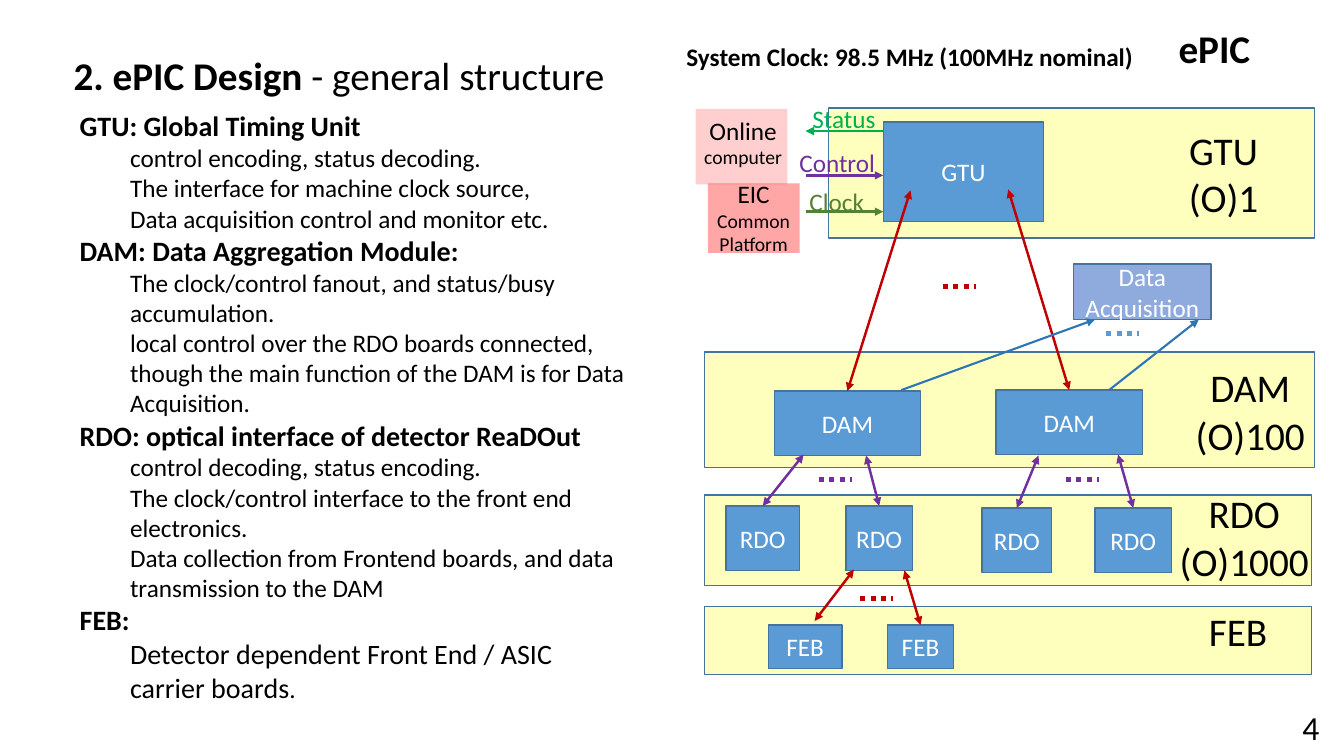
from dataclasses import dataclass

from lxml.etree import SubElement
from pptx import Presentation
from pptx.dml.color import RGBColor
from pptx.enum.dml import MSO_LINE
from pptx.enum.shapes import MSO_CONNECTOR, MSO_SHAPE
from pptx.enum.text import MSO_ANCHOR, MSO_AUTO_SIZE, PP_ALIGN
from pptx.oxml.ns import qn
from pptx.util import Inches, Pt


@dataclass(frozen=True)
class Theme:
    font: str = "Calibri"
    black: str = "000000"
    white: str = "FFFFFF"
    yellow: str = "FFFF00"
    red: str = "FF0000"
    box: str = "5B9BD5"
    acquisition: str = "8FAADC"
    outline: str = "43739E"
    clock: str = "548235"
    purple: str = "7030A0"
    status: str = "00B050"
    dark_red: str = "C00000"
    data: str = "2E75B6"
    large: int = 28
    number: int = 24
    heading: int = 20
    normal: int = 18
    small: int = 14


theme = Theme()


def write(frame, lines, size=theme.normal, color=theme.black, bold=False, align=PP_ALIGN.LEFT,
          anchor=MSO_ANCHOR.TOP, wrap=False, auto_size=MSO_AUTO_SIZE.SHAPE_TO_FIT_TEXT):
    """Fill a text frame; each line is a list of (text, format overrides) runs."""
    frame.word_wrap = wrap
    frame.auto_size = auto_size
    frame.vertical_anchor = anchor
    for index, line in enumerate(lines):
        paragraph = frame.paragraphs[0] if index == 0 else frame.add_paragraph()
        paragraph.alignment = align
        for text, changes in line:
            run = paragraph.add_run()
            run.text = text
            run.font.name = theme.font
            run.font.size = Pt(changes.get("size", size))
            run.font.bold = changes.get("bold", bold)
            run.font.color.rgb = RGBColor.from_string(color)


def draw_line(start, end, color, width, arrows=(), dash=None, target=None):
    """Draw a line with arrows at "headEnd" or "tailEnd"; target is joined at its top."""
    x1, y1, x2, y2 = (Inches(value) for value in (*start, *end))
    connector = slide.shapes.add_connector(MSO_CONNECTOR.STRAIGHT, x1, y1, x2, y2)
    connector.line.color.rgb = RGBColor.from_string(color)
    connector.line.width = Pt(width)
    if dash:
        connector.line.dash_style = dash
    for arrow in arrows:
        SubElement(connector.line._get_or_add_ln(), qn(f"a:{arrow}"), type="triangle")
    SubElement(connector._element.spPr, qn("a:effectLst"))
    if target:
        connector.end_connect(target, 0)


presentation = Presentation()
presentation.slide_width = Inches(13.33)
presentation.slide_height = Inches(7.5)
slide = presentation.slides.add_slide(presentation.slide_layouts[1])

# Title and description
title, body = slide.shapes.title, slide.placeholders[1]
for placeholder, place in ((title, (0.63, 0.46, 5.52, 0.57)), (body, (0.69, 1.03, 5.63, 6.06))):
    placeholder.left, placeholder.top, placeholder.width, placeholder.height = map(Inches, place)
write(title.text_frame, [[("2. ePIC Design ", {"bold": True}), ("- general structure", {})]],
      size=theme.large)

units = {
    "GTU: Global Timing Unit": [
        "control encoding, status decoding.",
        "The interface for machine clock source,",
        "Data acquisition control and monitor etc."],
    "DAM: Data Aggregation Module:": [
        "The clock/control fanout, and status/busy accumulation.",
        "local control over the RDO boards connected, though the main function of the DAM "
        "is for Data Acquisition."],
    "RDO: optical interface of detector ReaDOut": [
        "control decoding, status encoding.",
        "The clock/control interface to the front end electronics.",
        "Data collection from Frontend boards, and data transmission to the DAM"],
    "FEB:": [],
}
lines, levels = [], []
for heading, details in units.items():
    lines.append([(heading, {"size": theme.heading, "bold": True})])
    lines.extend([(detail, {})] for detail in details)
    levels.extend([0] + [1] * len(details))
lines.append([("Detector dependent Front End / ASIC carrier boards", {"size": theme.heading}),
              (".", {})])
levels.append(1)
write(body.text_frame, lines, wrap=True, auto_size=MSO_AUTO_SIZE.NONE)
for paragraph, level in zip(body.text_frame.paragraphs, levels):
    paragraph.level = level
    properties = paragraph._p.get_or_add_pPr()
    properties.set("marL", str(Inches(0.5 * level)))
    properties.set("indent", "0")
    SubElement(properties, qn("a:buNone"))
    paragraph.space_before = Pt(0)

# Bands, outside systems and boxes: place, fill, opacity in percent, outline, label
bands = [(8.22, 1.07, 4.82, 1.29), (6.99, 3.49, 6.05, 1.15),
         (6.99, 4.91, 6.02, 0.9), (6.99, 6.02, 6.02, 0.67)]
rectangles = [(place, theme.yellow, 26, True, "") for place in bands]
rectangles += [((7.02, 1.82, 0.91, 0.69), theme.red, 35, False, ""),
               ((6.9, 1.08, 0.91, 0.75), theme.red, 19, False, "")]
boxes = [
    ("GTU", 8.76, 1.21, 1.59, 0.99),
    ("DAM", 7.68, 3.88, 1.45, 0.64), ("DAM", 9.88, 3.87, 1.45, 0.64),
    ("RDO", 7.2, 5.02, 0.73, 0.64), ("RDO", 8.39, 5.02, 0.66, 0.64),
    ("RDO", 9.74, 5.04, 0.69, 0.64), ("RDO", 10.86, 5.04, 0.76, 0.64),
    ("FEB", 7.62, 6.2, 0.73, 0.43), ("FEB", 8.8, 6.2, 0.66, 0.43),
]
rectangles += [(place, theme.box, 100, True, label) for label, *place in boxes]
rectangles.append(((10.65, 2.62, 1.36, 0.55), theme.acquisition, 100, True, "Data Acquisition"))

labelled = []
for place, fill, opacity, outlined, label in rectangles:
    shape = slide.shapes.add_shape(MSO_SHAPE.RECTANGLE, *map(Inches, place))
    shape.shadow.inherit = False
    shape.fill.solid()
    shape.fill.fore_color.rgb = RGBColor.from_string(fill)
    if opacity < 100:
        color_element = shape._element.spPr.find(qn("a:solidFill"))[0]
        SubElement(color_element, qn("a:alpha"), val=str(opacity * 1000))
    if outlined:
        shape.line.color.rgb = RGBColor.from_string(theme.outline)
        shape.line.width = Pt(1)
    else:
        shape.line.fill.background()
    if label:
        shape.text_frame.margin_left = shape.text_frame.margin_right = Inches(0.05)
        write(shape.text_frame, [[(label, {})]], color=theme.white, align=PP_ALIGN.CENTER,
              anchor=MSO_ANCHOR.MIDDLE, wrap=True, auto_size=MSO_AUTO_SIZE.NONE)
        labelled.append(shape)
gtu, dam_1, dam_2, rdo_1, rdo_2, rdo_3, rdo_4, feb_1, feb_2, acquisition = labelled

# Signals between the outside systems and the GTU
for y, color, arrow in ((1.3, theme.status, "headEnd"), (1.74, theme.purple, "tailEnd"),
                        (2.1, theme.clock, "tailEnd")):
    draw_line((7.99, y), (8.76, y), color, 2, [arrow])

# Two-way links down the hierarchy
links = [
    ((9.03, 1.89), (8.4, 3.88), theme.dark_red, dam_1),
    ((10, 1.88), (10.61, 3.87), theme.dark_red, dam_2),
    ((7.97, 4.51), (7.57, 5.02), theme.purple, rdo_1),
    ((8.59, 4.52), (8.72, 5.02), theme.purple, rdo_2),
    ((10.3, 4.52), (10.08, 5.04), theme.purple, rdo_3),
    ((11.09, 4.51), (11.24, 5.04), theme.purple, rdo_4),
    ((8.47, 5.65), (8.08, 6.16), theme.dark_red, None),
    ((8.97, 5.66), (9.13, 6.2), theme.dark_red, feb_2),
]
for start, end, color, target in links:
    draw_line(start, end, color, 1.75, ["headEnd", "tailEnd"], target=target)
for start, end in (((11.89, 3.17), (11, 3.87)), ((10.86, 3.17), (8.94, 3.87))):
    draw_line(start, end, theme.data, 1.5, ["headEnd"])

# Dots standing for further units
for x, y, color in ((10.97, 3.31, theme.box), (9.35, 2.84, theme.dark_red),
                    (8.12, 4.76, theme.purple), (10.57, 4.76, theme.purple),
                    (8.53, 5.94, theme.dark_red)):
    draw_line((x, y), (x + 0.33, y), color, 3.75, dash=MSO_LINE.ROUND_DOT)

# Free labels: place, lines, format
large = {"size": theme.large}
centered = {"align": PP_ALIGN.CENTER}
small = {"size": theme.small}
labels = [
    ((7.96, 0.98, 0.83, 0.4), [[("Status", {})]], {"color": theme.status}),
    ((7.83, 1.41, 0.96, 0.4), [[("Control", {})]], {"color": theme.purple}),
    ((7.93, 1.8, 0.75, 0.4), [[("Clock", {})]], {"color": theme.clock}),
    ((6.88, 1.09, 0.98, 0.64), [[("Online ", {}), ("computer", small)]],
     {**centered, "wrap": True}),
    ((7.01, 1.72, 0.93, 0.88), [[("EIC", {})], [("Common", small)], [("Platform", small)]],
     centered),
    ((11.59, 1.2, 1.09, 1.04), [[("GTU (O)1", {})]], {**large, **centered, "wrap": True}),
    ((11.75, 3.56, 1.3, 1.04), [[("DAM", {})], [("(O)100", {})]], {**large, **centered}),
    ((11.59, 4.81, 1.5, 1.04), [[("RDO", {})], [("(O)1000", {})]], {**large, **centered}),
    ((11.89, 5.98, 0.79, 0.57), [[("FEB", {})]], large),
    ((11.59, 0.19, 0.92, 0.57), [[("ePIC", {})]], {**large, "bold": True}),
    ((6.71, 0.36, 4.69, 0.4), [[("System Clock: 98.5 MHz (100MHz nominal)", {})]],
     {"bold": True}),
    ((12.82, 6.96, 0.37, 0.5), [[("4", {})]], {"size": theme.number}),
]
for place, lines, text_format in labels:
    write(slide.shapes.add_textbox(*map(Inches, place)).text_frame, lines, **text_format)

presentation.save("out.pptx")
